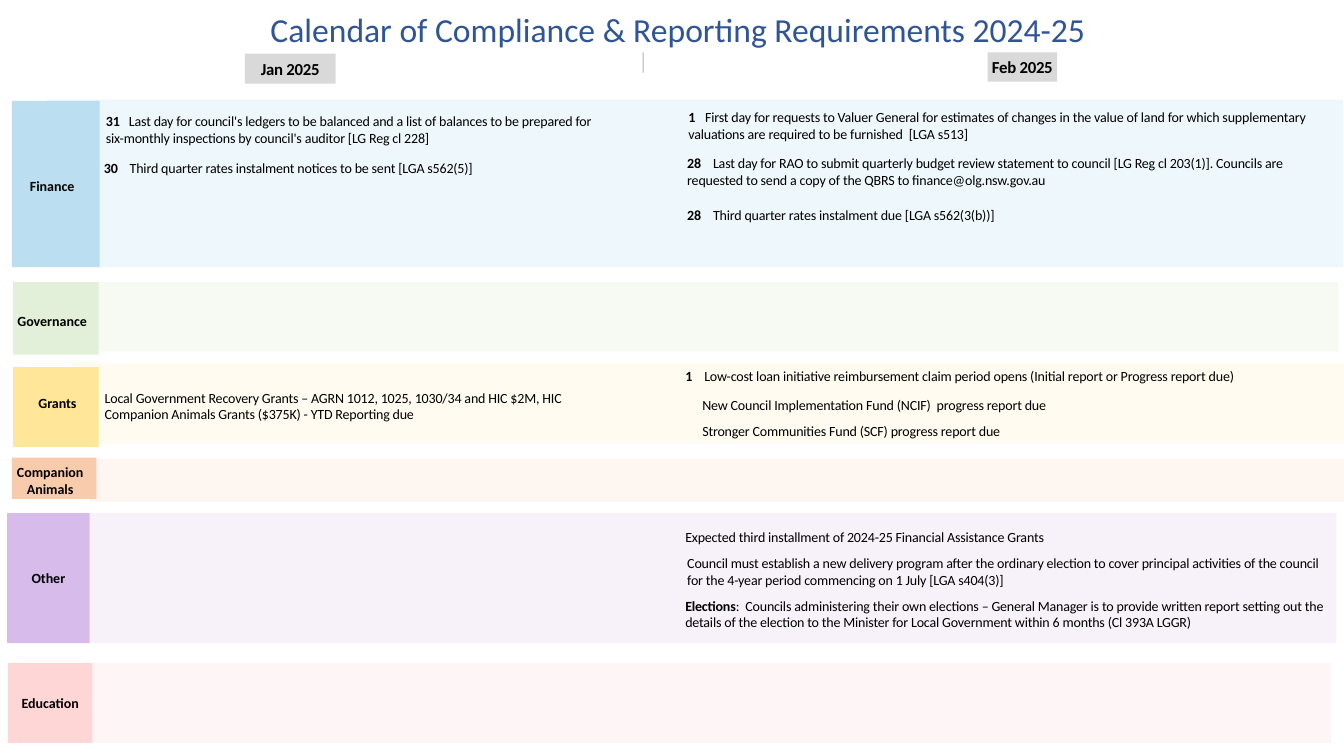
from dataclasses import dataclass

from lxml import etree
from pptx import Presentation
from pptx.dml.color import RGBColor
from pptx.enum.shapes import MSO_CONNECTOR, MSO_SHAPE
from pptx.enum.text import MSO_ANCHOR, MSO_AUTO_SIZE, PP_ALIGN
from pptx.oxml.ns import qn
from pptx.util import Cm, Pt

RECTANGLE, STRAIGHT = MSO_SHAPE.RECTANGLE, MSO_CONNECTOR.STRAIGHT
TOP, MIDDLE = MSO_ANCHOR.TOP, MSO_ANCHOR.MIDDLE
LEFT, CENTER = PP_ALIGN.LEFT, PP_ALIGN.CENTER
GROW = MSO_AUTO_SIZE.SHAPE_TO_FIT_TEXT


@dataclass(frozen=True)
class Theme:
    font: str = "Calibri"
    ink: str = "000000"
    title: str = "2F5597"
    month: str = "D9D9D9"
    title_size: int = 24
    month_size: int = 12
    body_size: int = 10
    band_opacity: int = 20
    divider_opacity: int = 30


# Lengths are centimetres: left, top, width, height.
BANDS = [
    ("D7BCEA", (2.26, 12.93, 31.42, 3.28)),
    ("ADD8ED", (1.19, 2.51, 32.66, 4.22)),
    ("D3E8C6", (2.36, 7.11, 31.37, 1.75)),
    ("FFECB7", (1.8, 9.14, 32.54, 2.03)),
    ("F9D5BD", (2.26, 11.56, 32.03, 1.09)),
    ("FED6D6", (2.26, 16.71, 31.29, 2.01)),
]
# Category, tab colour, tab box, and the label's own box where it is set apart.
CATEGORIES = [
    ("Finance", "BBDEF0", (0.3, 2.54, 2.21, 4.19), (-0.03, 4.42, 2.69, 0.51)),
    ("Governance", "E2F0D9", (0.33, 7.11, 2.16, 1.83), (-0.03, 7.82, 2.69, 0.51)),
    ("Grants", "FFE699", (0.33, 9.25, 2.16, 2.01), (0.33, 9.93, 2.24, 0.46)),
    ("Companion Animals", "F8CBAD", (0.3, 11.53, 2.13, 1.04), (-0.08, 11.76, 2.69, 0.71)),
    ("Other", "D6BBEB", (0.18, 12.93, 2.08, 3.28), None),
    ("Education", "FED6D6", (0.2, 16.71, 2.13, 2.01), None),
]
MONTHS = [("Jan 2025", (6.17, 1.35, 2.29, 0.76)), ("Feb 2025", (24.89, 1.32, 1.75, 0.74))]
ONE_LINE, TWO_LINES = 0.43, 0.86
# Box, bold lead, tab stop after the lead (0 for none), wording.
NOTES = [
    ((2.67, 2.84, 12.4, TWO_LINES), "31", 0.58,
     "Last day for council's ledgers to be balanced and a list of balances to be prepared for "
     "six-monthly inspections by council's auditor [LG Reg cl 228]"),
    ((2.62, 4.01, 11.23, ONE_LINE), "30", 0.65,
     "Third quarter rates instalment notices to be sent [LGA s562(5)]"),
    ((17.35, 2.74, 16.66, TWO_LINES), "1", 0.42,
     "First day for requests to Valuer General for estimates of changes in the value of land for "
     "which supplementary valuations are required to be furnished  [LGA s513]"),
    ((17.32, 3.89, 16.23, TWO_LINES), "28", 0.65,
     "Last day for RAO to submit quarterly budget review statement to council [LG Reg cl 203(1)]. "
     "Councils are requested to send a copy of the QBRS to finance@olg.nsw.gov.au"),
    ((17.32, 5.21, 10.08, ONE_LINE), "28", 0.65,
     "Third quarter rates instalment due [LGA s562(3(b))]"),
    ((2.64, 9.8, 12.04, TWO_LINES), "", 0,
     "Local Government Recovery Grants – AGRN 1012, 1025, 1030/34 and HIC $2M, HIC "
     "Companion Animals Grants ($375K) - YTD Reporting due"),
    ((17.27, 9.25, 14.76, ONE_LINE), "1", 0.48,
     "Low-cost loan initiative reimbursement claim period opens "
     "(Initial report or Progress report due)"),
    ((17.7, 9.98, 11.73, ONE_LINE), "", 0,
     "New Council Implementation Fund (NCIF)  progress report due"),
    ((17.7, 10.64, 11.73, ONE_LINE), "", 0,
     "Stronger Communities Fund (SCF) progress report due"),
    ((17.27, 13.31, 12.98, ONE_LINE), "", 0,
     "Expected third installment of 2024-25 Financial Assistance Grants"),
    ((17.32, 13.97, 16.28, TWO_LINES), "", 0,
     "Council must establish a new delivery program after the ordinary election to cover principal "
     "activities of the council for the 4-year period commencing on 1 July [LGA s404(3)]"),
    ((17.27, 15.04, 16.66, TWO_LINES), "Elections", 0,
     ":  Councils administering their own elections – General Manager is to provide written report "
     "setting out the details of the election to the Minister for Local Government within 6 months "
     "(Cl 393A LGGR)"),
]


def set_opacity(fill_owner, percent):
    """Make the solid colour inside a shape's or line's XML see-through."""
    colour = next(fill_owner.iter(qn("a:srgbClr")))
    etree.SubElement(colour, qn("a:alpha")).set("val", str(percent * 1000))


class CalendarPage:
    def __init__(self, page, theme):
        self.page = page
        self.theme = theme

    def block(self, place, colour, opacity=100):
        box = self.page.shapes.add_shape(RECTANGLE, *map(Cm, place))
        box.shadow.inherit = False
        box.fill.solid()
        box.fill.fore_color.rgb = RGBColor.from_string(colour)
        box.line.fill.background()
        if opacity < 100:
            set_opacity(box._element.spPr, opacity)
        return box

    def text_box(self, place):
        return self.page.shapes.add_textbox(*map(Cm, place))

    def add_text(self, box, spans, size, colour=None, align=LEFT, anchor=MIDDLE,
                 inset=0, wrap=True, spacing=0):
        """Fill a box with one paragraph of (text, bold) spans; spacing is in points."""
        frame = box.text_frame
        frame.word_wrap = wrap
        frame.vertical_anchor = anchor
        if inset is not None:
            frame.margin_left = frame.margin_top = Cm(inset)
            frame.margin_right = frame.margin_bottom = Cm(inset)
        para = frame.paragraphs[0]
        para.alignment = align
        para.font.name = self.theme.font
        para.font.size = Pt(size)
        para.font.color.rgb = RGBColor.from_string(colour or self.theme.ink)
        if len(spans) == 1:
            para.font.bold = spans[0][1]
        for text, bold in spans:
            span = para.add_run()
            span.text = text
            if len(spans) > 1:
                span.font.bold = bold
            if spacing:
                span._r.get_or_add_rPr().set("spc", str(round(spacing * 100)))
        return para

    def title(self, text, place):
        box = self.text_box(place)
        self.add_text(box, [(text, False)], self.theme.title_size, self.theme.title,
                      CENTER, TOP, inset=None)
        box.text_frame.auto_size = GROW

    def month(self, text, place):
        self.add_text(self.block(place, self.theme.month), [(text, True)],
                      self.theme.month_size, align=CENTER, wrap=False, spacing=-0.2)

    def category(self, text, colour, place, label_place):
        box = self.block(place, colour)
        if label_place:
            box = self.text_box(label_place)
        self.add_text(box, [(text, True)], self.theme.body_size, align=CENTER)

    def note(self, place, lead, tab_stop, text):
        box = self.text_box(place)
        body = "\t" + text if tab_stop else text
        spans = [(lead, True), (body, False)] if lead else [(body, False)]
        para = self.add_text(box, spans, self.theme.body_size, spacing=-0.1)
        box.text_frame.auto_size = GROW
        if tab_stop:
            stops = etree.Element(qn("a:tabLst"))
            etree.SubElement(stops, qn("a:tab"), pos=str(Cm(tab_stop)), algn="l")
            para._p.get_or_add_pPr().insert(0, stops)

    def divider(self, left, top, bottom):
        line = self.page.shapes.add_connector(STRAIGHT, Cm(left), Cm(top), Cm(left), Cm(bottom))
        line.line.width = Pt(0.75)
        line.line.color.rgb = RGBColor.from_string(self.theme.ink)
        set_opacity(line._element.spPr, self.theme.divider_opacity)
        etree.SubElement(line._element.spPr, qn("a:effectLst"))


def main():
    deck = Presentation()
    deck.slide_width, deck.slide_height = Cm(33.87), Cm(19.05)
    theme = Theme()
    calendar = CalendarPage(deck.slides.add_slide(deck.slide_layouts[6]), theme)
    for colour, place in BANDS:
        calendar.block(place, colour, theme.band_opacity)
    for category in CATEGORIES:
        calendar.category(*category)
    calendar.title("Calendar of Compliance & Reporting Requirements 2024-25",
                   (6.2, 0.1, 21.77, 1.27))
    for month in MONTHS:
        calendar.month(*month)
    calendar.divider(16.21, 1.32, 1.83)
    for note in NOTES:
        calendar.note(*note)
    deck.save("out.pptx")


if __name__ == "__main__":
    main()
